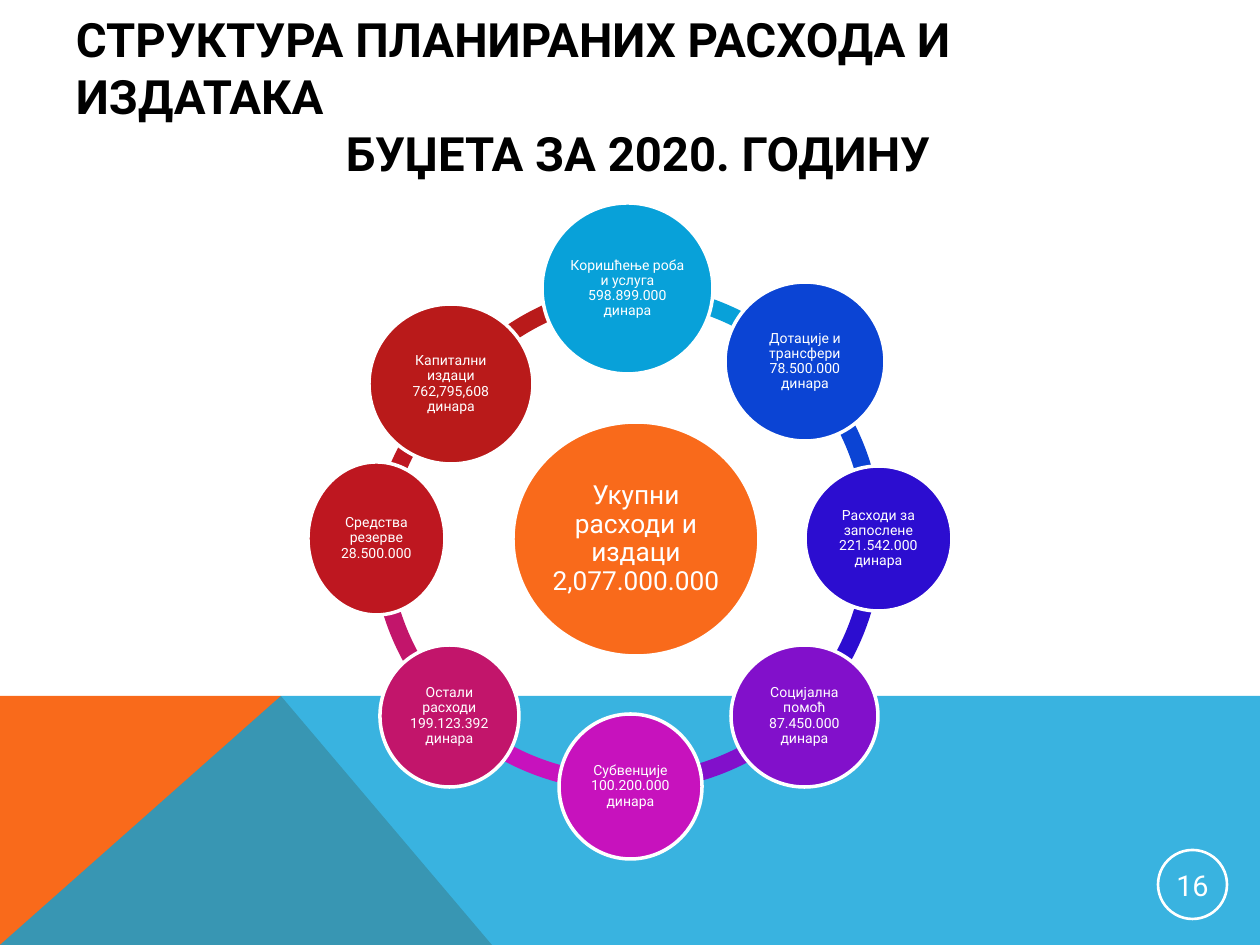
from lxml import etree
from pptx import Presentation, util as u
from pptx.dml.color import RGBColor
from pptx.enum import shapes, text
from pptx.oxml.ns import qn

HUES = {
    "white": "FFFFFF", "black": "000000", "orange": "F96A1B",
    "cyan": "08A1D9", "blue": "0B44D4", "indigo": "2C0DD0",
    "purple": "8210CB", "magenta": "C712BD", "pink": "C2156B",
    "red": "BE1720", "rust": "B91A1A",
}
ARC = 510
NODES = [
    ("cyan", "Коришћење роба и услуга 598.899.000 динара",
     (542, 203, 171, 171), (372, 284), (270, 315)),
    ("blue", "Дотације и трансфери 78.500.000 динара",
     (725, 282, 160, 159), (372, 284), (315, 0)),
    ("indigo", "Расходи за запослене 221.542.000 динара",
     (805, 466, 147, 145), (372, 284), (0, 45)),
    ("purple", "Социјална помоћ 87.450.000 динара",
     (731, 645, 147, 142), (375, 281), (45.93, 89.8)),
    ("magenta", "Субвенције 100.200.000 динара",
     (559, 714, 143, 145), (369, 281), (88.5, 134.1)),
    ("pink", "Остали расходи 199.123.392 динара",
     (380, 645, 139, 142), (372, 284), (135, 180)),
    ("red", "Средства резерве 28.500.000",
     (308, 462, 137, 153), (370, 309), (185.81, 225.94)),
    ("rust", "Капитални издаци 762,795,608 динара",
     (369, 304, 164, 160), (394, 282), (217.83, 264.88)),
]


def px(n):
    return u.Emu(round(n * 914400 / 126))


def rgb(hue):
    return RGBColor.from_string(HUES[hue])


def write(shape, *lines, size=8, hue="white", bold=False, align="CENTER",
          space=None, inset=0, indent=0):
    frame = shape.text_frame
    frame.word_wrap = True
    frame.vertical_anchor = text.MSO_ANCHOR.MIDDLE
    frame.margin_left = frame.margin_right = px(inset)
    frame.margin_top = frame.margin_bottom = px(0)
    for i, line in enumerate(lines):
        para = frame.add_paragraph() if i else frame.paragraphs[0]
        para.alignment = getattr(text.PP_ALIGN, align)
        if space:
            para.line_spacing = space
        if i and indent:
            para._p.get_or_add_pPr().set("marL", str(px(indent)))
        run = para.add_run()
        run.text = line
        run.font.name = "Roboto"
        run.font.size = u.Pt(size)
        run.font.bold = bold
        run.font.color.rgb = rgb(hue)


class Deck:
    def __init__(self):
        self.show = Presentation()
        self.show.slide_width, self.show.slide_height = px(1260), px(945)
        self.slide = self.show.slides.add_slide(self.show.slide_layouts[6])

    def paint(self, shape, fill=None, line=None, alpha=None):
        shape.shadow.inherit = False
        if fill:
            shape.fill.solid()
            shape.fill.fore_color.rgb = rgb(fill)
        else:
            shape.fill.background()
        if alpha:
            tone = shape.fill._xPr.find(".//" + qn("a:srgbClr"))
            etree.SubElement(tone, qn("a:alpha")).set("val", str(alpha * 1000))
        if line:
            shape.line.color.rgb = rgb("white")
            shape.line.width = u.Pt(line)
        else:
            shape.line.fill.background()
        return shape

    def shard(self, points, fill, alpha=None):
        pen = self.slide.shapes.build_freeform(*points[0], scale=px(1))
        pen.add_line_segments(points[1:], close=True)
        return self.paint(pen.convert_to_shape(), fill, alpha=alpha)

    def title(self, box, *lines, **style):
        write(self.slide.shapes.add_textbox(*map(px, box)), *lines, **style)

    def disc(self, box, label, fill=None, line=2, **style):
        oval = self.slide.shapes.add_shape(shapes.MSO_SHAPE.OVAL, *map(px, box))
        write(self.paint(oval, fill, line), label, **style)

    def arc(self, spot, span, fill):
        band = self.slide.shapes.add_shape(
            shapes.MSO_SHAPE.BLOCK_ARC, *map(px, (*spot, ARC, ARC)))
        for i, angle in enumerate(span):
            band.adjustments[i] = angle * 0.6
        band.adjustments[2] = 0.034
        self.paint(band, fill)


def main():
    deck = Deck()
    deck.shard([(0, 945), (0, 696), (281, 696), (492, 945)], "orange")
    deck.shard([(0, 945), (281, 696), (1260, 696), (1260, 945)], "cyan", 80)
    deck.title((63, 37, 1134, 117), "СТРУКТУРА ПЛАНИРАНИХ РАСХОДА И ИЗДАТАКА",
               "БУЏЕТА ЗА 2020. ГОДИНУ", size=27, hue="black", bold=True,
               align="LEFT", inset=13, indent=270)
    deck.disc((1158, 850, 69, 69), "16", line=1.5, size=16.5)
    for hue, _, _, spot, span in reversed(NODES):
        deck.arc(spot, span, hue)
    deck.disc((513, 422, 246, 234), "Укупни расходи и издаци 2,077.000.000",
              "orange", size=15, space=0.9)
    for hue, label, box, _, _ in NODES:
        deck.disc(box, label, hue, space=0.9)
    deck.show.save("out.pptx")


if __name__ == "__main__":
    main()
